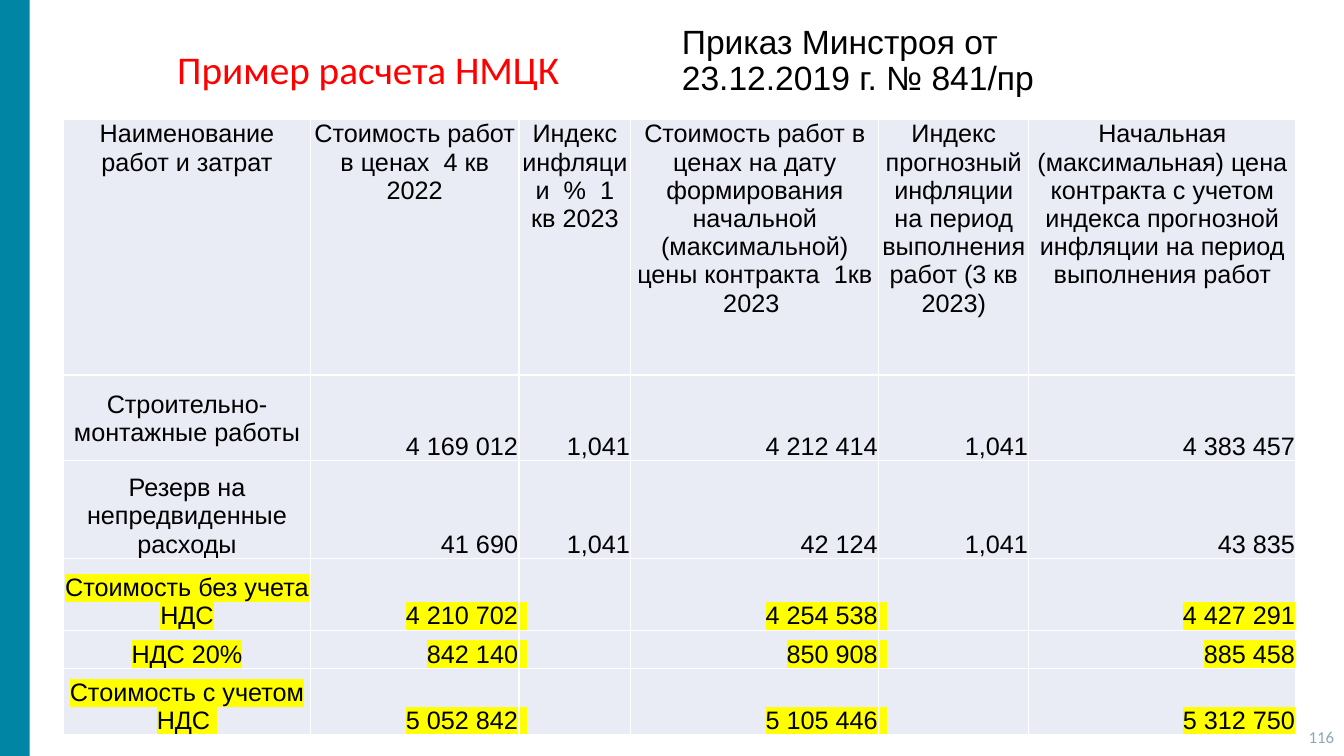
import pptx
import pptx.util
import pptx.dml.color
import pptx.enum.shapes
import pptx.enum.text
import pptx.oxml
import pptx.oxml.ns

WIDE, HIGH = pptx.util.Inches(13.33), pptx.util.Inches(7.5)
ALIGN = pptx.enum.text.PP_ALIGN
ANCHOR = pptx.enum.text.MSO_ANCHOR
SHAPE = pptx.enum.shapes.MSO_SHAPE
TEAL, RED, GREY, BLACK = "0085A4", "FF0000", "8CA7B7", "000000"
PALE, WHITE, YELLOW = "E9EBF5", "FFFFFF", "FFFF00"

COLS = [2.45, 2.07, 1.11, 2.46, 1.49, 2.65]
ROWS = [2.54, 0.85, 0.97, 0.71, 0.38, 0.66]
COSTS = [
    ["Наименование работ и затрат", "Стоимость работ в ценах  4 кв 2022",
     "Индекс инфляции  %  1 кв 2023",
     "Стоимость работ в ценах на дату формирования начальной (максимальной) цены контракта  1кв 2023 ",
     "Индекс прогнозный инфляции на период выполнения работ (3 кв 2023)",
     "Начальная (максимальная) цена контракта с учетом индекса прогнозной инфляции на период выполнения работ"],
    ["Строительно- монтажные работы", "4 169 012", "1,041", "4 212 414", "1,041", "4 383 457"],
    ["Резерв на непредвиденные расходы", "41 690", "1,041", "42 124", "1,041", "43 835"],
    ["Стоимость без учета НДС", "4 210 702", " ", "4 254 538", " ", "4 427 291"],
    ["НДС 20%", "842 140", " ", "850 908", " ", "885 458"],
    ["Стоимость с учетом НДС ", "5 052 842", " ", "5 105 446", " ", "5 312 750"],
]
FIRST_TOTAL = 3


def paint(target, tone):
    """Give a fill a solid colour from a hex string."""
    target.solid()
    target.fore_color.rgb = pptx.dml.color.RGBColor.from_string(tone)


def area(left, top, width, height):
    """Turn percentages of the slide into lengths."""
    return (int(WIDE * left / 100), int(HIGH * top / 100),
            int(WIDE * width / 100), int(HIGH * height / 100))


def write(frame, text, size=18, font="Arial", tone=BLACK, align=ALIGN.LEFT,
          anchor=ANCHOR.TOP, space=None, mark=None):
    """Write one formatted paragraph into a text frame."""
    frame.vertical_anchor = anchor
    para = frame.paragraphs[0]
    para.alignment = align
    if space:
        para.line_spacing = space
    run = para.add_run()
    run.text = text
    run.font.size = pptx.util.Pt(size)
    paint(run.font.fill, tone)
    if mark:
        run.font._element.append(pptx.oxml.parse_xml(
            f'<a:highlight {pptx.oxml.ns.nsdecls("a")}>'
            f'<a:srgbClr val="{mark}"/></a:highlight>'))
    run.font.name = font


def label(slide, box, text, wrap=True, **style):
    """Place a text box on the slide."""
    frame = slide.shapes.add_textbox(*box).text_frame
    frame.word_wrap = wrap
    write(frame, text, **style)


def stripe(slide, box):
    """Draw the coloured band along the edge."""
    band = slide.shapes.add_shape(SHAPE.ROUNDED_RECTANGLE, *box)
    band.adjustments[0] = 0
    band.shadow.inherit = False
    paint(band.fill, TEAL)
    band.line.fill.background()


def frame_cell(cell):
    """Give a cell thin white borders, a pale fill and narrow margins."""
    props = cell._tc.get_or_add_tcPr()
    for side in "LRTB":
        props.append(pptx.oxml.parse_xml(
            f'<a:ln{side} {pptx.oxml.ns.nsdecls("a")} w="12700"><a:solidFill>'
            f'<a:srgbClr val="{WHITE}"/></a:solidFill></a:ln{side}>'))
    paint(cell.fill, PALE)
    cell.margin_left = cell.margin_right = cell.margin_top = pptx.util.Inches(0.01)
    cell.margin_bottom = 0


def fill_cell(cell, row, col, text):
    """Write a cell with the alignment its row and column call for."""
    align = ALIGN.CENTER if row == 0 or col == 0 else ALIGN.RIGHT
    if text == " ":
        align = ALIGN.LEFT
    write(cell.text_frame, text, align=align,
          mark=YELLOW if row >= FIRST_TOTAL else None)
    low = ANCHOR.MIDDLE if (row, col) == (1, 0) else ANCHOR.BOTTOM
    cell.vertical_anchor = ANCHOR.TOP if row == 0 else low


def costs(slide, box):
    """Build the cost table inside its box."""
    table = slide.shapes.add_table(len(ROWS), len(COLS), *box).table
    for col, share in zip(table.columns, COLS):
        col.width = int(box[2] * share / sum(COLS))
    for row, share in zip(table.rows, ROWS):
        row.height = int(box[3] * share / sum(ROWS))
    for row, texts in enumerate(COSTS):
        for col, text in enumerate(texts):
            cell = table.cell(row, col)
            frame_cell(cell)
            fill_cell(cell, row, col, text)


def main():
    """Build the slide and save it."""
    deck = pptx.Presentation()
    deck.slide_width, deck.slide_height = WIDE, HIGH
    slide = deck.slides.add_slide(deck.slide_layouts[6])
    label(slide, area(77.5, 94.8, 22.5, 5.33), "116", size=12, font="Calibri",
          tone=GREY, align=ALIGN.RIGHT, anchor=ANCHOR.MIDDLE)
    stripe(slide, area(0, 0, 2.2, 100))
    label(slide, area(50, 2.67, 34, 11.6),
          "Приказ Минстроя от 23.12.2019 г. № 841/пр", size=24, space=0.9)
    costs(slide, area(4.73, 15.73, 91.7, 81.5))
    label(slide, area(12.45, 5.33, 30.23, 7.6), "Пример расчета НМЦК",
          wrap=False, size=28, font="Calibri", tone=RED)
    deck.save("out.pptx")


if __name__ == "__main__":
    main()
